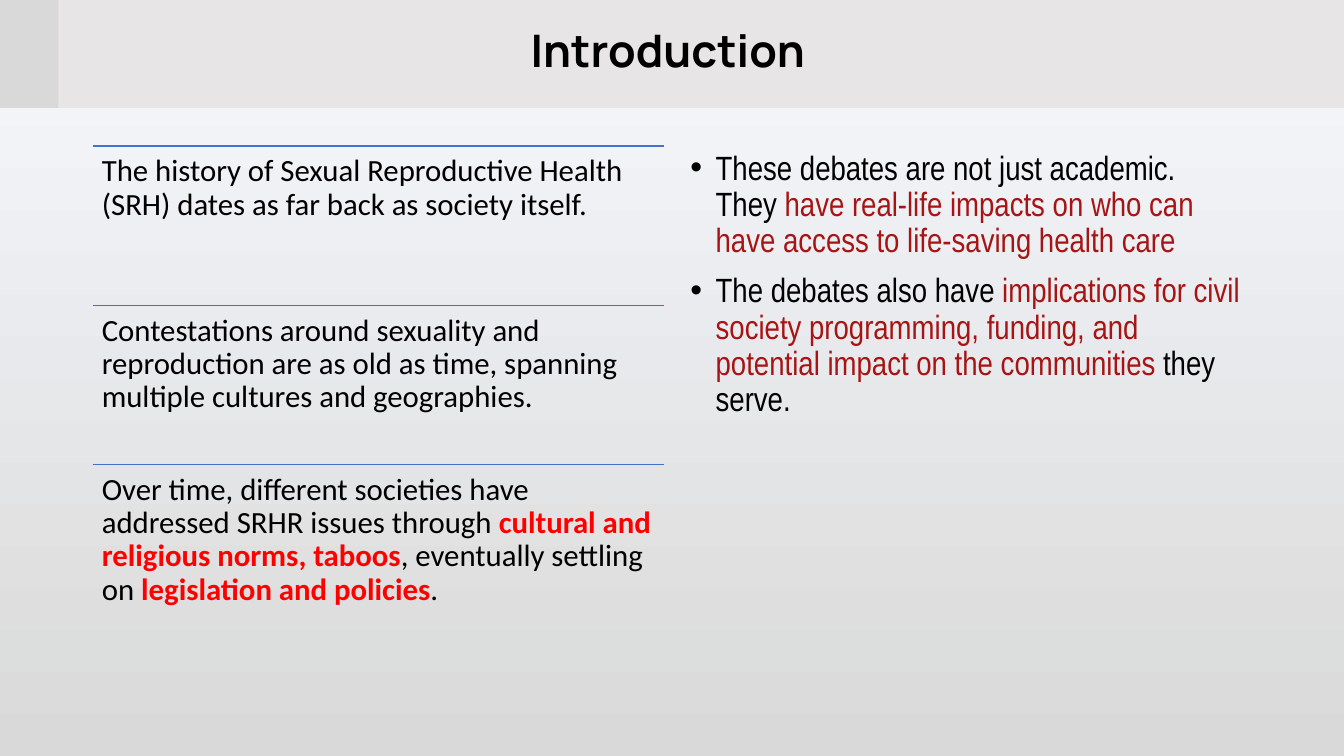
from lxml.etree import SubElement
from pptx import Presentation
from pptx.dml.color import RGBColor
from pptx.enum.shapes import MSO_CONNECTOR as Connector, MSO_SHAPE as Shape
from pptx.enum.text import MSO_ANCHOR as Anchor, MSO_AUTO_SIZE as AutoSize, PP_ALIGN as Align
from pptx.oxml.ns import qn
from pptx.util import Inches, Pt

BLACK = RGBColor(0x00, 0x00, 0x00)
RED = RGBColor(0xFF, 0x00, 0x00)
CRIMSON = RGBColor(0xA6, 0x14, 0x14)
RULE_BLUE = RGBColor(0x44, 0x72, 0xC4)
BAND = RGBColor(0xE7, 0xE5, 0xE6)
GREY = RGBColor(0xD9, 0xD9, 0xD9)
PALE = RGBColor(0xF6, 0xF8, 0xFC)

TITLE = {"name": "Manrope", "size": Pt(32), "bold": True}
HISTORY = {"name": "Calibri", "size": Pt(22), "bold": False}
DEBATE = {"name": "Arial Narrow", "size": Pt(24), "bold": False}
KEY_TERM = {"color": RED, "bold": True}
IMPACT = {"color": CRIMSON}

LEFT, TOP, COLUMN, ROW = 0.92, 1.45, 5.67, 1.58

HISTORY_POINTS = [
    [("The history of Sexual Reproductive Health (SRH) dates as far back as society itself.", {})],
    [("Contestations around sexuality and reproduction are as old as time, "
      "spanning multiple cultures and geographies.", {})],
    [("Over time, different societies have addressed SRHR issues through ", {}),
     ("cultural and religious norms, taboos", KEY_TERM),
     (", eventually settling on ", {}),
     ("legislation and policies", KEY_TERM),
     (".", {})],
]
DEBATE_POINTS = [
    [("These debates are not just academic. They ", {}),
     ("have real-life impacts on who can have access to life-saving health care", IMPACT)],
    [("The debates also have ", {}),
     ("implications for civil society programming, funding, and potential impact "
      "on the communities ", IMPACT),
     ("they serve.", {})],
]


class IntroSlide:
    def __init__(self, prs):
        self.slide = prs.slides.add_slide(prs.slide_layouts[5])
        self.shapes = self.slide.shapes

    def background(self, *colors):
        fill = self.slide.background.fill
        fill.gradient()
        fill.gradient_angle = 270
        for stop, color in zip(fill.gradient_stops, colors):
            stop.color.rgb = color

    def band(self, width, height, color):
        band = self.shapes.add_shape(Shape.RECTANGLE, 0, 0, Inches(width), Inches(height))
        band.shadow.inherit = False
        band.fill.solid()
        band.fill.fore_color.rgb = color
        band.line.fill.background()

    def add_runs(self, paragraph, pieces, style):
        """Add each (text, format changes) piece as a run on top of the style."""
        paragraph.line_spacing = 0.9
        for text, changes in pieces:
            run = paragraph.add_run()
            run.text = text
            for key, value in {"color": BLACK, **style, **changes}.items():
                if key == "color":
                    run.font.color.rgb = value
                else:
                    setattr(run.font, key, value)

    def title(self, text, left, top, width, height):
        title = self.shapes.title
        title.left, title.top = Inches(left), Inches(top)
        title.width, title.height = Inches(width), Inches(height)
        frame = title.text_frame
        frame.vertical_anchor = Anchor.MIDDLE
        frame.auto_size = AutoSize.NONE
        frame.paragraphs[0].alignment = Align.CENTER
        self.add_runs(frame.paragraphs[0], [(text, {})], TITLE)
        # Bring the title in front of the header bands
        title.element.getparent().append(title.element)

    def rule(self, left, top, width):
        rule = self.shapes.add_connector(
            Connector.STRAIGHT, Inches(left), Inches(top), Inches(left + width), Inches(top))
        rule.line.color.rgb = RULE_BLUE
        rule.line.width = Pt(1)
        SubElement(rule.element.spPr, qn("a:effectLst"))

    def text(self, left, top, width, height):
        frame = self.shapes.add_textbox(
            Inches(left), Inches(top), Inches(width), Inches(height)).text_frame
        frame.word_wrap = True
        return frame

    def history_point(self, pieces, top):
        self.rule(LEFT, top, COLUMN)
        frame = self.text(LEFT, top, COLUMN, ROW)
        for side in ("left", "top", "right", "bottom"):
            setattr(frame, f"margin_{side}", Inches(0.09))
        self.add_runs(frame.paragraphs[0], pieces, HISTORY)

    def bullets(self, points, left, top, width, height):
        frame = self.text(left, top, width, height)
        for i, pieces in enumerate(points):
            paragraph = frame.add_paragraph() if i else frame.paragraphs[0]
            if i:
                paragraph.space_before = Pt(10)
            self.add_runs(paragraph, pieces, DEBATE)
            props = paragraph._p.get_or_add_pPr()
            props.set("marL", str(Inches(0.25)))
            props.set("indent", str(Inches(-0.25)))
            SubElement(props, qn("a:buFont"), typeface="Arial")
            SubElement(props, qn("a:buChar"), char="•")


def main():
    prs = Presentation()
    prs.slide_width, prs.slide_height = Inches(13.33), Inches(7.5)
    intro = IntroSlide(prs)
    intro.background(PALE, GREY)
    intro.band(13.33, 1.07, BAND)
    intro.band(0.58, 1.07, GREY)
    intro.title("Introduction ", LEFT, 0.23, 11.5, 0.6)
    for i, pieces in enumerate(HISTORY_POINTS):
        intro.history_point(pieces, TOP + i * ROW)
    intro.bullets(DEBATE_POINTS, 6.75, TOP, COLUMN, 4.76)
    prs.save("out.pptx")


if __name__ == "__main__":
    main()
